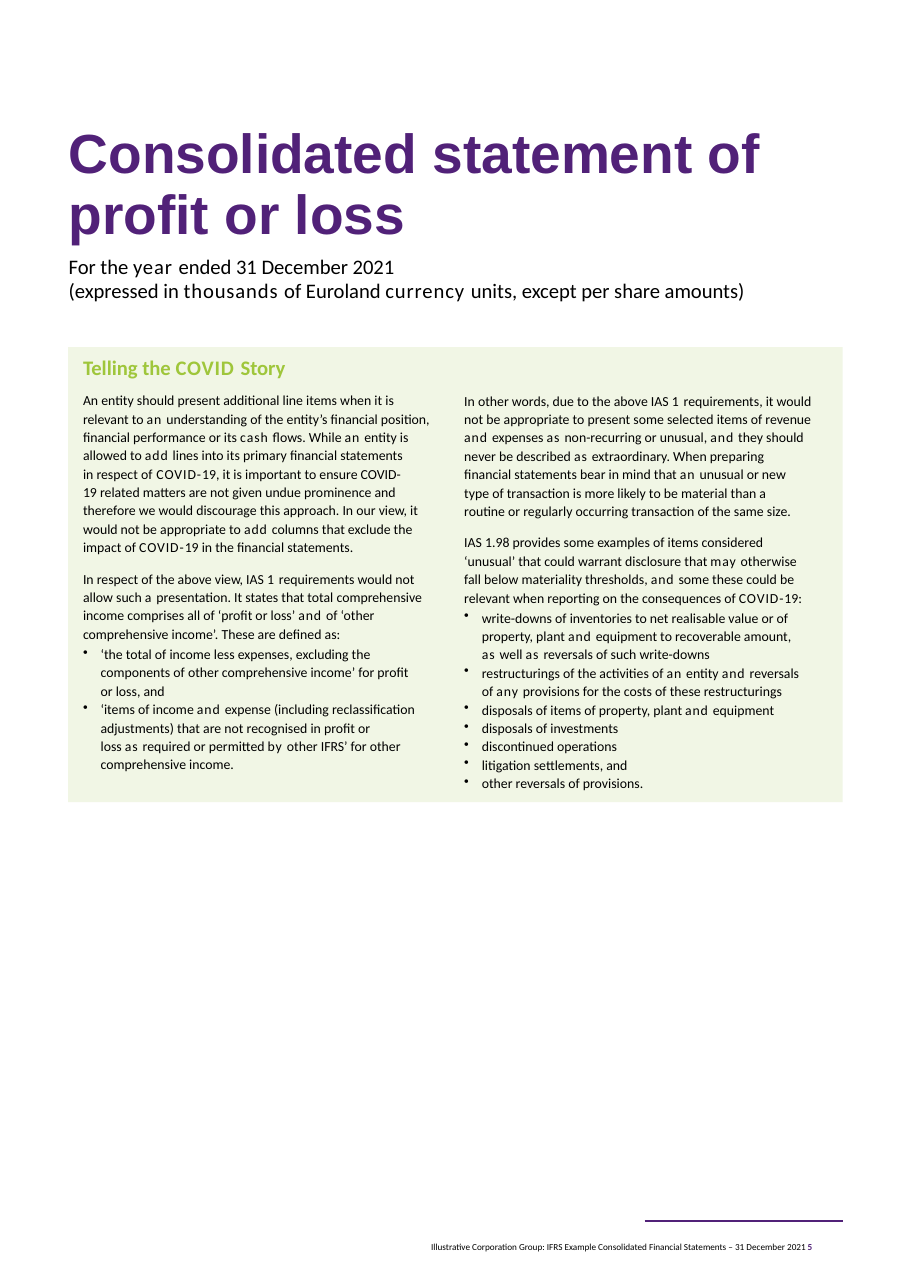
import pptx
import pptx.dml.color
import pptx.enum.shapes
import pptx.util
from dataclasses import dataclass
from lxml import etree

Pt = pptx.util.Pt


@dataclass(frozen=True)
class Theme:
    """Colours, fonts, type sizes and spacing of the page."""
    purple: str = "512178"
    green: str = "9FC63B"
    pale: str = "F1F6E5"
    black: str = "000000"
    head: str = "Arial"
    body: str = "Calibri"
    title: float = 36
    lead: float = 13.5
    text: float = 9
    foot: float = 6
    leading: float = 1.11
    hang: float = 11.5
    track: int = 60


T = Theme()

VIEW = """An entity should present additional line items when it is
relevant to _an _understanding of the entity’s financial position,
financial performance or its _cash _flows. While _an _entity is
allowed to _add _lines into its primary financial statements
in respect of_ COVID-_19, it is important to ensure COVID-
19 related matters are not given undue prominence and
therefore we would discourage this approach. In our view, it
would not be appropriate to _add _columns that exclude the
impact of _COVID-_19 in the financial statements."""

STATES = """In respect of the above view, IAS _1 _requirements would not
allow such _a _presentation. It states that total comprehensive
income comprises all of ‘profit or loss’ _and _of ‘other
comprehensive income’. These are defined as:"""

TERMS = ["""‘the total of income less expenses, excluding the
components of other comprehensive income’ for profit
or loss, and""", """‘items of income _and _expense (including reclassification
adjustments) that are not recognised in profit or
loss _as _required or permitted _by _other IFRS’ for other
comprehensive income."""]

WORDS = """In other words, due to the above IAS _1 _requirements, it would
not be appropriate to present some selected items of revenue
_and _expenses _as _non-recurring or unusual, _and _they should
never be described _as _extraordinary. When preparing
financial statements bear in mind that _an _unusual or new
type of transaction is more likely to be material than _a
_routine or regularly occurring transaction of the same size."""

CASES = """IAS 1.98 provides some examples of items considered
‘unusual’ that could warrant disclosure that _may _otherwise
fall below materiality thresholds, _and _some these could be
relevant when reporting on the consequences of _COVID-_19:"""

ITEMS = ["""write-downs of inventories to net realisable value or of
property, plant _and _equipment to recoverable amount,
_as _well _as _reversals of such write-downs""",
         """restructurings of the activities of _an _entity _and _reversals
of _any _provisions for the costs of these restructurings""",
         "disposals of items of property, plant _and _equipment",
         "disposals of investments",
         "discontinued operations",
         "litigation settlements, and",
         "other reversals of provisions."]


def tint(color):
    """Turn a hex string into a colour."""
    return pptx.dml.color.RGBColor.from_string(color)


def add_box(slide, x, y, w, h, top=1):
    """Add an empty wrapping text frame."""
    frame = slide.shapes.add_textbox(Pt(x), Pt(y), Pt(w), Pt(h)).text_frame
    frame.word_wrap = True
    frame.margin_left, frame.margin_top = Pt(1), Pt(top)
    frame.margin_right = frame.margin_bottom = 0
    return frame


def add_runs(para, text):
    """Fill a paragraph, breaking at newlines and tracking _marked_ words."""
    for i, part in enumerate(text.split("_")):
        for j, line in enumerate(part.split("\n")):
            if j:
                para.add_line_break()
            if line:
                run = para.add_run()
                run.text = line
                if i % 2:
                    run._r.get_or_add_rPr().set("spc", str(T.track))


def add_para(frame, text, size=T.text, color=T.black, face=T.body,
             bold=False, before=0, leading=T.leading, bullet=False):
    """Add a styled paragraph to a frame."""
    first = frame.paragraphs[0]
    para = frame.add_paragraph() if first.runs else first
    para.space_before, para.line_spacing = Pt(before), leading
    if bullet:
        props = para._p.get_or_add_pPr()
        props.set("marL", str(Pt(T.hang)))
        props.set("indent", str(-Pt(T.hang)))
        mark = etree.SubElement(props, pptx.oxml.ns.qn("a:buChar"))
        mark.set("char", "•")
    font = para.font
    font.size, font.name, font.bold = Pt(size), face, bold
    font.color.rgb = tint(color)
    add_runs(para, text)
    return para


def add_list(slide, x, y, w, h, items):
    """Add a bulleted list."""
    frame = add_box(slide, x, y, w, h)
    for i, item in enumerate(items):
        add_para(frame, item, before=0 if i else 1, bullet=True)


def add_panel(slide, x, y, w, h):
    """Add the plain tinted panel."""
    kind = pptx.enum.shapes.MSO_SHAPE.RECTANGLE
    panel = slide.shapes.add_shape(kind, Pt(x), Pt(y), Pt(w), Pt(h))
    panel.shadow.inherit = False
    panel.fill.solid()
    panel.fill.fore_color.rgb = tint(T.pale)
    panel.line.fill.background()


def add_rule(slide, x, y, end):
    """Add a level purple line."""
    kind = pptx.enum.shapes.MSO_CONNECTOR.STRAIGHT
    rule = slide.shapes.add_connector(kind, Pt(x), Pt(y), Pt(end), Pt(y))
    rule.line.color.rgb = tint(T.purple)
    rule.line.width = Pt(1.5)
    props = rule._element.spPr
    etree.SubElement(props, pptx.oxml.ns.qn("a:effectLst"))


def add_foot(slide):
    """Add the footer rule, line and page number."""
    add_rule(slide, 421.2, 797.8, 550.8)
    frame = add_box(slide, 280.8, 810, 270.7, 9.4)
    para = add_para(frame, "Illustrative Corporation Group: IFRS Example Consolidated "
                    "Financial Statements – 31 December 2021 ",
                    T.foot, before=1, leading=1.0)
    page = para.add_run()
    page.text = "5"
    page.font.bold = True
    page.font.color.rgb = tint(T.purple)


def add_head(slide):
    """Add the title and the lines below it."""
    frame = add_box(slide, 43.9, 75.6, 458.6, 85, top=5)
    add_para(frame, "Consolidated statement of profit or loss", T.title,
             T.purple, T.head, True, 5, Pt(40))
    frame = add_box(slide, 43.9, 165.6, 463, 33.1)
    add_para(frame, "For the _year _ended 31 December 2021", T.lead,
             before=1, leading=Pt(15.6))
    add_para(frame, "(expressed in _thousands _of Euroland _currency _units, "
             "except per share amounts)", T.lead, leading=Pt(15.6))


def add_story(slide):
    """Add the panel with its two columns."""
    left, right = 53.3, 302.4
    add_panel(slide, 44.6, 226.8, 506.2, 297.4)
    frame = add_box(slide, left, 231.1, 239.8, 189.4)
    add_para(frame, "Telling the _COVID _Story", T.lead, T.green,
             bold=True, before=1, leading=1.0)
    add_para(frame, VIEW, before=6.6)
    add_para(frame, STATES, before=8.5)
    add_list(slide, left, 419.8, 230.4, 85.7, TERMS)
    frame = add_box(slide, right, 254.2, 239, 142.6)
    add_para(frame, WORDS, before=1)
    add_para(frame, CASES, before=8.5)
    add_list(slide, right, 396, 229, 121.7, ITEMS)


def main():
    """Build the page and save it."""
    deck = pptx.Presentation()
    deck.slide_width, deck.slide_height = Pt(594.72), Pt(841.68)
    slide = deck.slides.add_slide(deck.slide_layouts[6])
    add_foot(slide)
    add_head(slide)
    add_story(slide)
    deck.save("out.pptx")


if __name__ == "__main__":
    main()
